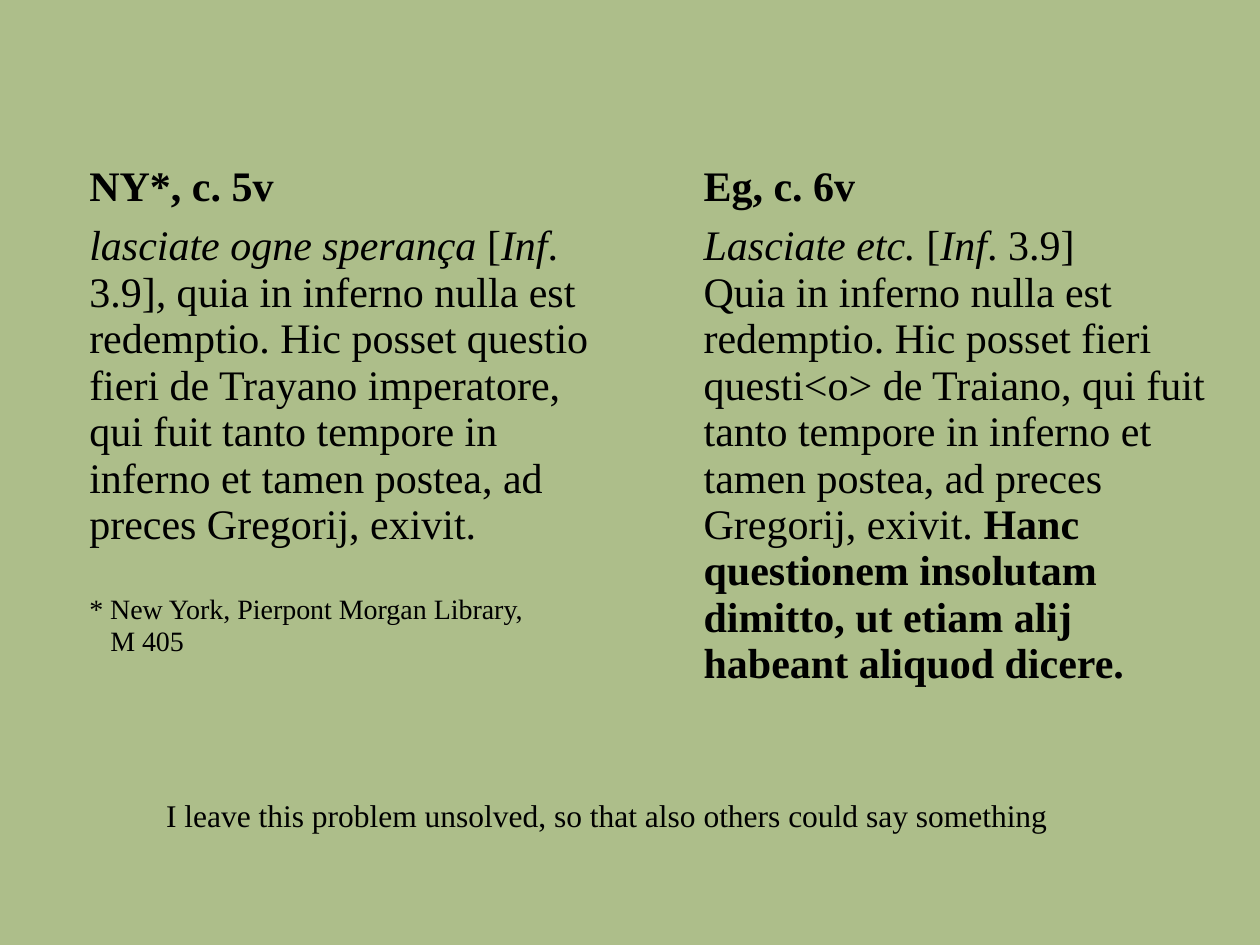
from pptx import Presentation
from pptx.dml.color import RGBColor
from pptx.util import Cm, Pt

FONT = "Times New Roman"
INK, SAGE = "000000", "ADBE8A"
NO_GRID = "{2D5ABB26-0587-4C30-8999-92F81FD0307C}"

HEADINGS = ["NY*, c. 5v", "Eg, c. 6v"]
READINGS = [
    [
        [("lasciate ogne sperança ", "i"), ("[", ""), ("Inf", "i"), (". 3.9]", ""), (", ", "i"),
         ("quia in inferno nulla est redemptio. Hic posset questio fieri de Trayano "
          "imperatore, qui fuit tanto tempore in inferno et tamen postea, ad preces "
          "Gregorij, exivit.", "")],
    ],
    [
        [("Lasciate etc. ", "i"), ("[", ""), ("Inf", "i"), (". 3.9]", "")],
        [("Quia in inferno nulla est redemptio. Hic posset fieri questi<o> de Traiano, "
          "qui fuit tanto tempore in inferno et tamen postea, ad preces Gregorij, exivit. ", ""),
         ("Hanc questionem insolutam dimitto, ut etiam alij habeant aliquod dicere.", "b")],
    ],
]
FOOTNOTE = [("* New York, Pierpont Morgan Library,", 26.5, 0), ("M 405", 0, 12)]
TRANSLATION = "I leave this problem unsolved, so that also others could say something"


def color(hex_code):
    """Return the colour for a hex string."""
    return RGBColor.from_string(hex_code)


def write(frame, spans, size, before=0, indent=0):
    """Add one paragraph of styled spans, using the empty first one if free."""
    first = frame.paragraphs[0]
    para = frame.add_paragraph() if first.runs else first
    para.font.name, para.font.size = FONT, Pt(size)
    para.font.color.rgb = color(INK)
    para.space_before = Pt(before)
    if indent:
        para._p.get_or_add_pPr().set("marL", str(Pt(indent)))
    for text, style in spans:
        span = para.add_run()
        span.text = text
        span.font.bold, span.font.italic = style == "b", style == "i"


def add_comparison(page):
    """Add the borderless two-column table of readings."""
    table = page.shapes.add_table(2, 2, Cm(0), Cm(3.18), Cm(24.77), Cm(10.9)).table
    table._tbl.tblPr[0].text = NO_GRID
    table.horz_banding = table.first_row = False
    for row, height in zip(table.rows, (1.2, 9.7)):
        row.height = Cm(height)
    for cell in table.iter_cells():
        cell.fill.background()
        cell.margin_left = Cm(1.8)
    for column, (heading, reading) in enumerate(zip(HEADINGS, READINGS)):
        write(table.cell(0, column).text_frame, [(heading, "b")], 24)
        for spans in reading:
            write(table.cell(1, column).text_frame, spans, 24)
    for text, before, indent in FOOTNOTE:
        write(table.cell(1, 0).text_frame, [(text, "")], 16, before, indent)


def main():
    """Build and save the slide."""
    deck = Presentation()
    deck.slide_width, deck.slide_height = Cm(25.4), Cm(19.05)
    page = deck.slides.add_slide(deck.slide_layouts[6])
    page.background.fill.solid()
    page.background.fill.fore_color.rgb = color(SAGE)
    add_comparison(page)
    box = page.shapes.add_textbox(Cm(3.1), Cm(15.93), Cm(19.2), Cm(1.02))
    box.text_frame.word_wrap = True
    write(box.text_frame, [(TRANSLATION, "")], 18)
    deck.save("out.pptx")


if __name__ == "__main__":
    main()
